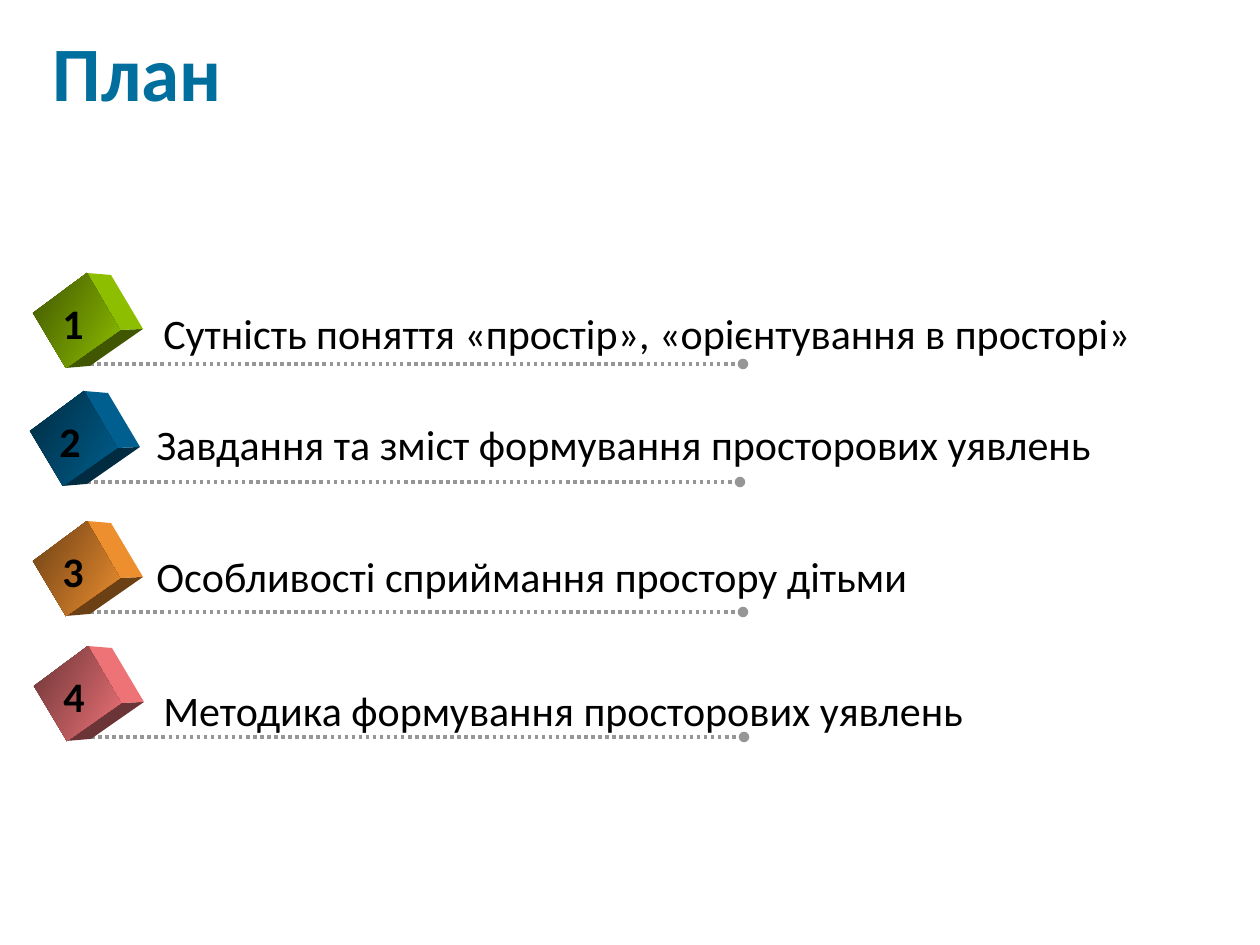
import pptx
import pptx.dml.color
import pptx.enum.dml
import pptx.enum.shapes
import pptx.enum.text
import pptx.oxml.ns
import pptx.util
from lxml import etree

PX = 914400 / 126
FONT = "Calibri"
ROW_WIDTH, ROW_HEIGHT = 710, 95
FRONT = [(0, 40), (54, 0), (87, 57), (33, 95)]
SIDE = [(54, 0), (78, 2), (110, 56), (87, 57)]
BASE = [(87, 57), (110, 56), (57, 93), (33, 95)]
ROWS = [
    ((33, 273), "99CC00", "Сутність поняття «простір», «орієнтування в просторі»", (118, 28, 995)),
    ((30, 391), "006699", "Завдання та зміст формування просторових уявлень", (114, 21, 969)),
    ((33, 521), "FF9933", "Особливості сприймання простору дітьми", (111, 23, 784)),
    ((34, 646), "FF7C80", "Методика формування просторових уявлень", (117, 32, 833)),
]


def px(length):
    """Turn px into EMU."""
    return pptx.util.Emu(round(length * PX))


def rgb(color):
    """Turn a hex string into a colour."""
    return pptx.dml.color.RGBColor.from_string(color)


def shade(color, factor):
    """Darken a hex colour by a factor."""
    return "".join(f"{round(int(color[i:i + 2], 16) * factor):02X}" for i in (0, 2, 4))


def add_run(paragraph, text, size, color, bold=False):
    """Add one formatted run to a paragraph."""
    run = paragraph.add_run()
    run.text = text
    run.font.name = FONT
    run.font.size = pptx.util.Pt(size)
    run.font.bold = bold
    run.font.color.rgb = rgb(color)


def add_label(shapes, box, text, bold=False):
    """Add a one-line text box."""
    label = shapes.add_textbox(*map(px, box))
    label.text_frame.word_wrap = False
    add_run(label.text_frame.paragraphs[0], text, 24, "000000", bold)


def add_face(shapes, origin, points, color, dark=None):
    """Draw one cube face, graded from dark to colour when dark is given."""
    left, top = origin
    corners = [(left + x, top + y) for x, y in points]
    builder = shapes.build_freeform(*corners[0], scale=PX)
    builder.add_line_segments(corners[1:], close=True)
    face = builder.convert_to_shape()
    face.shadow.inherit = False
    face.line.fill.background()
    if dark is None:
        face.fill.solid()
        face.fill.fore_color.rgb = rgb(color)
        return
    face.fill.gradient()
    face.fill.gradient_angle = 330
    for stop, stop_color in zip(face.fill.gradient_stops, (dark, color)):
        stop.color.rgb = rgb(stop_color)


def add_cube(shapes, origin, color):
    """Draw the three visible faces of a cube."""
    add_face(shapes, origin, BASE, shade(color, 0.42))
    add_face(shapes, origin, SIDE, shade(color, 0.93))
    add_face(shapes, origin, FRONT, shade(color, 0.93), shade(color, 0.42))


def add_rule(shapes, left, top, right):
    """Draw a dotted rule that ends in a dot."""
    rule = shapes.add_connector(
        pptx.enum.shapes.MSO_CONNECTOR.STRAIGHT, px(left), px(top), px(right), px(top))
    rule.line.color.rgb = rgb("969696")
    rule.line.width = pptx.util.Pt(2)
    rule.line.dash_style = pptx.enum.dml.MSO_LINE.ROUND_DOT
    properties = rule._element.spPr
    line = properties.find(pptx.oxml.ns.qn("a:ln"))
    etree.SubElement(line, pptx.oxml.ns.qn("a:tailEnd"), type="oval")
    etree.SubElement(properties, pptx.oxml.ns.qn("a:effectLst"))


def add_row(slide, box, number, color, text, label):
    """Place a numbered cube, its rule and its label in a box."""
    left, top, width, height = box
    label_left, label_top, label_width = label
    shapes = slide.shapes.add_group_shape().shapes
    add_rule(shapes, left + 50, top + height - 4, left + width)
    add_cube(shapes, (left, top), color)
    add_label(shapes, (left + label_left, top + label_top, label_width, 64), text)
    add_label(shapes, (left + 17, top + 18, 47, 64), str(number), True)


def add_title(slide, box, text):
    """Move and format the title placeholder."""
    title = slide.shapes.title
    title.left, title.top, title.width, title.height = map(px, box)
    title.text_frame.vertical_anchor = pptx.enum.text.MSO_ANCHOR.MIDDLE
    paragraph = title.text_frame.paragraphs[0]
    paragraph.alignment = pptx.enum.text.PP_ALIGN.LEFT
    paragraph.line_spacing = 0.9
    add_run(paragraph, text, 44, "006F9D", True)


def main():
    """Build the plan slide."""
    presentation = pptx.Presentation()
    presentation.slide_width = px(1260)
    presentation.slide_height = px(945)
    slide = presentation.slides.add_slide(presentation.slide_layouts[5])
    add_title(slide, (40, 15, 789, 123), "План")
    for number, (origin, color, text, label) in enumerate(ROWS, 1):
        add_row(slide, (*origin, ROW_WIDTH, ROW_HEIGHT), number, color, text, label)
    presentation.save("out.pptx")


if __name__ == "__main__":
    main()
